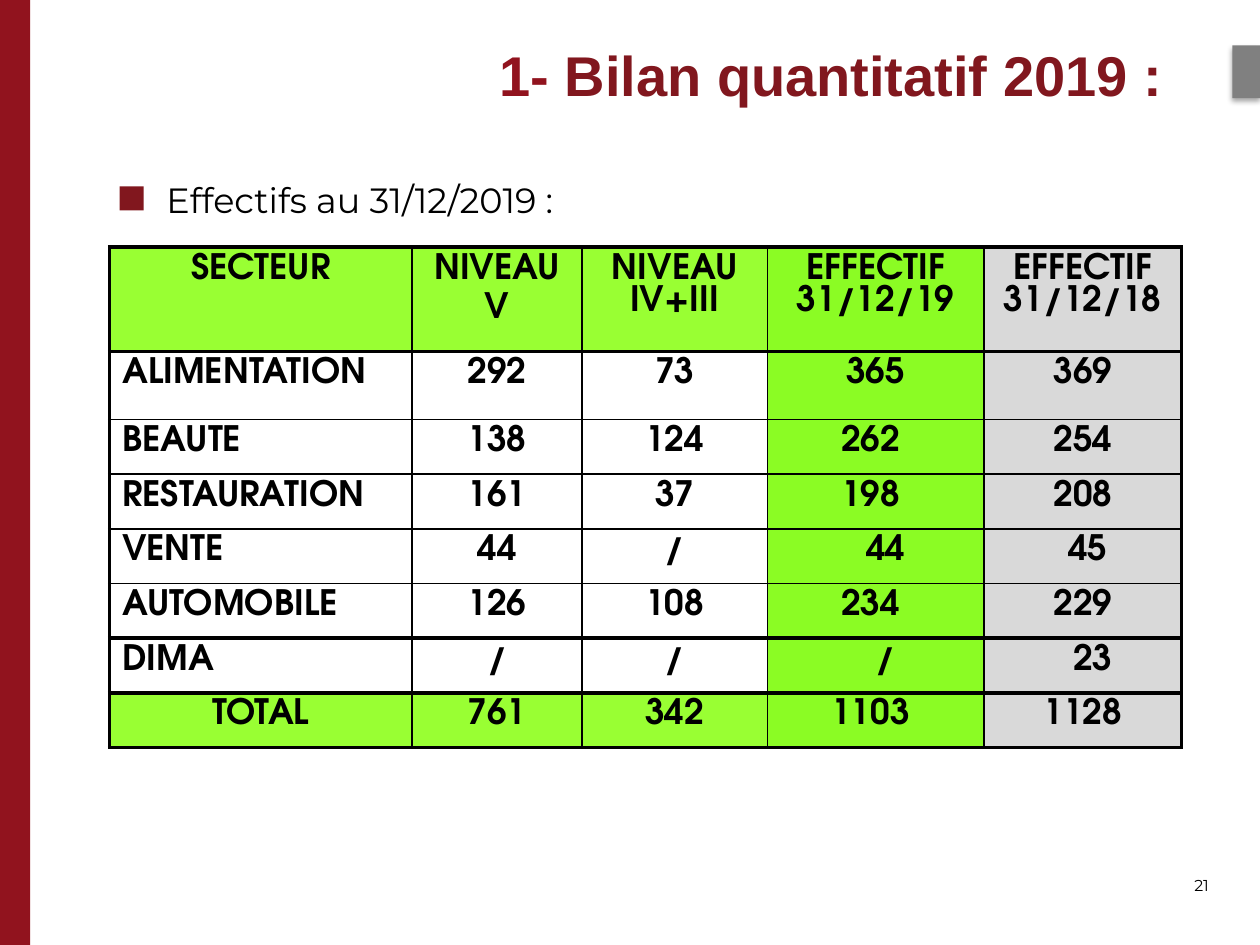
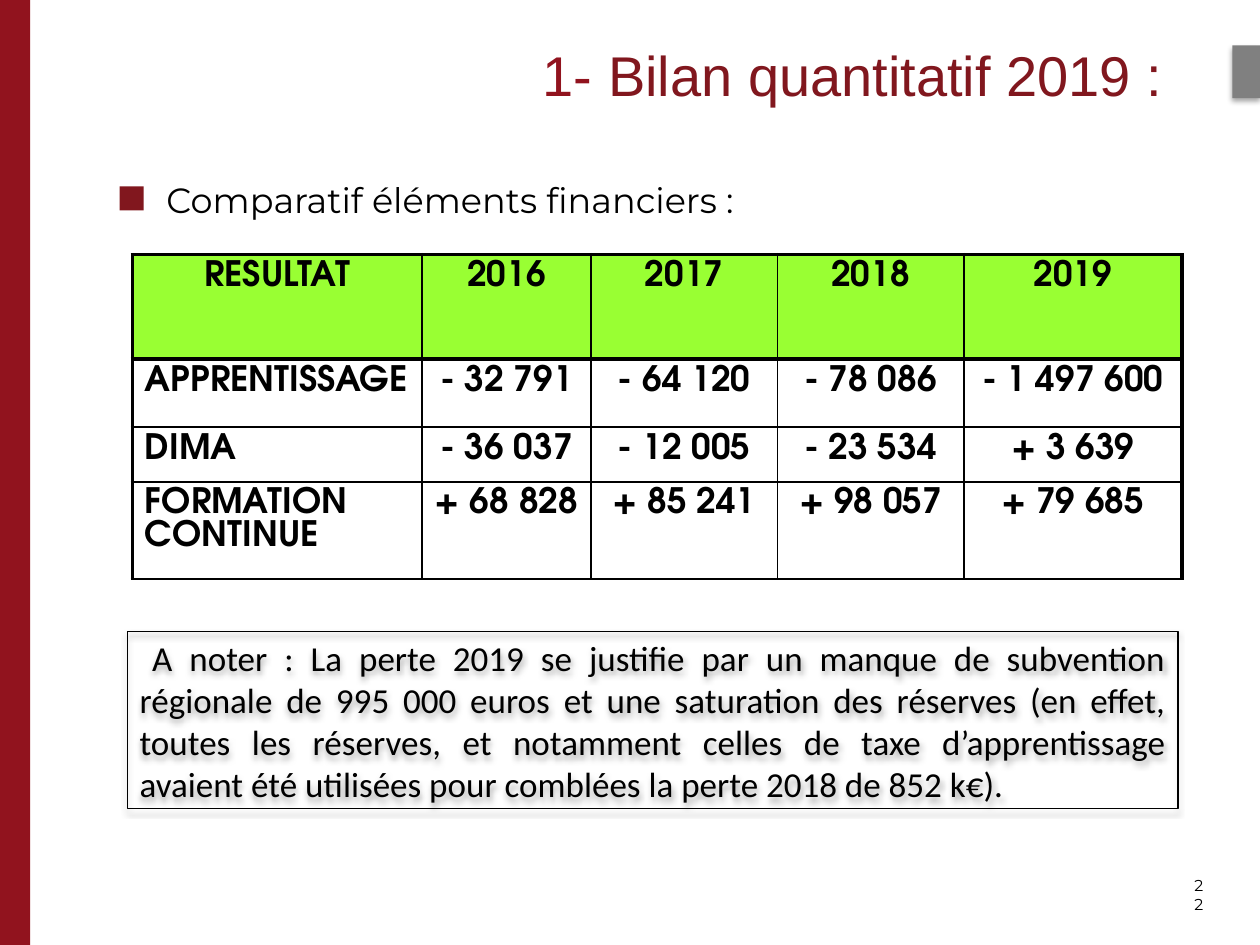
from lxml import etree
from pptx import Presentation
from pptx.dml.color import RGBColor
from pptx.enum.shapes import MSO_SHAPE as Preset
from pptx.enum.text import MSO_ANCHOR as Anchor, MSO_AUTO_SIZE as AutoSize, PP_ALIGN as Align
from pptx.oxml.ns import qn
from pptx.util import Inches, Pt

# Shared look
WIDTH, HEIGHT = 10, 7.5
RED, DARK_RED, BLACK, GREY = "91131E", "81171E", "000000", "808080"
LIME, GREEN, SILVER, WHITE = "99FF33", "8BFC24", "D9D9D9", "FFFFFF"
TITLE_FONT, BODY_FONT, TABLE_FONT, NOTE_FONT = "Arial", "Montserrat", "TeX Gyre Adventor", "Calibri"
THIN, THICK = 1, 2.25
SPACE = 0.08  # width of one space in the table font

# Content: "heavy" lists the thick horizontal rules, "nudges" shifts cells by whole spaces
SLIDES = [
    {
        "number": "21",
        "bold": True,
        "subtitle": "Effectifs au 31/12/2019 :",
        "origin": (0.87, 1.96),
        "columns": [2.4, 1.35, 1.47, 1.72, 1.57],
        "heights": [0.83, 0.54] + [0.43] * 6,
        "rows": [
            ["SECTEUR", "NIVEAU\nV", "NIVEAU IV+III", "EFFECTIF 31/12/19", "EFFECTIF 31/12/18"],
            ["ALIMENTATION", "292", "73", "365", "369"],
            ["BEAUTE", "138", "124", "262", "254"],
            ["RESTAURATION", "161", "37", "198", "208"],
            ["VENTE", "44", "/", "44", "45"],
            ["AUTOMOBILE", "126", "108", "234", "229"],
            ["DIMA", "/", "/", "/", "23"],
            ["TOTAL", "761", "342", "1103", "1128"],
        ],
        "lime_rows": {0, 7},
        "column_fills": {3: GREEN, 4: SILVER},
        "heavy": {0, 1, 6, 7, 8},
        "nudges": {(2, 3): -1, (3, 3): -1, (4, 3): 2, (5, 3): -1, (6, 3): 2,
                   (7, 3): -1, (4, 4): 1, (6, 4): 2},
        "note": None,
    },
    {
        "number": "22",
        "bold": False,
        "subtitle": "Comparatif éléments financiers :",
        "origin": (1.05, 2.02),
        "columns": [2.3, 1.34, 1.48, 1.48, 1.73],
        "heights": [0.83, 0.54, 0.43, 0.77],
        "rows": [
            ["RESULTAT", "2016", "2017", "2018", "2019"],
            ["APPRENTISSAGE", "- 32 791", "- 64 120", "- 78 086", "- 1 497 600"],
            ["DIMA", "- 36 037", "- 12 005", "- 23 534", "+ 3 639"],
            ["FORMATION CONTINUE", "+ 68 828", "+ 85 241", "+ 98 057", "+ 79 685"],
        ],
        "lime_rows": {0},
        "column_fills": {},
        "heavy": {0, 1},
        "nudges": {},
        "note": "A noter : La perte 2019 se justifie par un manque de subvention régionale de "
                "995 000 euros et une saturation des réserves (en effet, toutes les réserves, et "
                "notamment celles de taxe d’apprentissage avaient été utilisées pour comblées la "
                "perte 2018 de 852 k€).",
    },
]


def color(value):
    return RGBColor.from_string(value)


def place(shape, left, top, width, height):
    shape.left, shape.top, shape.width, shape.height = map(Inches, (left, top, width, height))


def write(frame, text, size=20, font=BODY_FONT, fill=BLACK, bold=False, align=Align.LEFT,
          spacing=None, gap=4, indent=0):
    """Write text (a string, or a list of (text, colour) runs) into a frame."""
    runs = [(text, fill)] if isinstance(text, str) else text
    frame.word_wrap = True
    paragraph = frame.paragraphs[0]
    paragraphs = [paragraph]
    for content, run_fill in runs:
        for index, line in enumerate(content.split("\n")):
            if index:
                paragraph = frame.add_paragraph()
                paragraphs.append(paragraph)
            run = paragraph.add_run()
            run.text = line
            run.font.size, run.font.name, run.font.bold = Pt(size), font, bold
            run.font.color.rgb = color(run_fill)
    for index, paragraph in enumerate(paragraphs):
        paragraph.alignment = align
        paragraph.space_before = Pt(gap if index else 0)
        if spacing:
            paragraph.line_spacing = spacing
        properties = paragraph._p.get_or_add_pPr()
        properties.set("marL", "0")
        properties.set("indent", str(Inches(indent)))


def add_shadow(shape):
    effects = shape._element.spPr.find(qn("a:effectLst"))
    shadow = etree.SubElement(effects, qn("a:outerShdw"), blurRad=str(Pt(3.1)),
                              dist=str(Pt(1.8)), dir="5400000", rotWithShape="0")
    tint = etree.SubElement(shadow, qn("a:srgbClr"), val=BLACK)
    etree.SubElement(tint, qn("a:alpha"), val="35000")


def add_rectangle(slide, box, fill=None, line=None, shadow=False):
    shape = slide.shapes.add_shape(Preset.RECTANGLE, *map(Inches, box))
    shape.shadow.inherit = False
    if fill:
        shape.fill.solid()
        shape.fill.fore_color.rgb = color(fill)
    else:
        shape.fill.background()
    if line:
        shape.line.color.rgb = color(line)
        shape.line.width = Pt(0.75)
    else:
        shape.line.fill.background()
    if shadow:
        add_shadow(shape)
    return shape


def set_borders(cell, widths):
    properties = cell._tc.get_or_add_tcPr()
    for side in "LRTB":
        line = etree.SubElement(properties, qn(f"a:ln{side}"), w=str(Pt(widths[side])))
        solid = etree.SubElement(line, qn("a:solidFill"))
        etree.SubElement(solid, qn("a:srgbClr"), val=BLACK)


def add_grid(slide, data):
    columns, heights, rows = data["columns"], data["heights"], data["rows"]
    box = (*data["origin"], sum(columns), sum(heights))
    table = slide.shapes.add_table(len(rows), len(columns), *map(Inches, box)).table
    table.first_row = table.horz_banding = False
    for column, width in zip(table.columns, columns):
        column.width = Inches(width)
    for row, height in zip(table.rows, heights):
        row.height = Inches(height)

    def rule(index):
        return THICK if index in data["heavy"] else THIN

    for r, row in enumerate(rows):
        lime = r in data["lime_rows"]
        for c, text in enumerate(row):
            cell = table.cell(r, c)
            set_borders(cell, {"L": THIN if c else THICK,
                               "R": THICK if c == len(row) - 1 else THIN,
                               "T": rule(r), "B": rule(r + 1)})
            cell.fill.solid()
            cell.fill.fore_color.rgb = color(data["column_fills"].get(c, LIME if lime else WHITE))
            nudge = data["nudges"].get((r, c), 0) * SPACE
            cell.margin_left = Inches(0.1 + max(nudge, 0))
            cell.margin_right = Inches(0.1 + max(-nudge, 0))
            write(cell.text_frame, text, font=TABLE_FONT, bold=True,
                  align=Align.CENTER if c or lime else Align.LEFT)


def add_frame(slide, data):
    """Band, tab, title, subtitle with its square, and page number."""
    add_rectangle(slide, (0, 0, 0.24, HEIGHT), fill=RED)
    add_rectangle(slide, (WIDTH - 0.22, 0.36, 0.22, 0.42), fill=GREY, shadow=True)
    add_rectangle(slide, (0.95, 1.48, 0.19, 0.19), fill=DARK_RED)

    title, subtitle = slide.shapes.title, slide.placeholders[1]
    place(title, 3.23, 0.27, 6.47, 0.64)
    place(subtitle, 1.22, 1.2, 5.34, 0.6)
    for shape in (title, subtitle):
        shape.text_frame.auto_size = AutoSize.NONE
        shape.text_frame.vertical_anchor = Anchor.TOP
    title.text_frame.margin_right = Inches(0.47)
    write(title.text_frame, [("1-", RED), (" Bilan quantitatif 2019 :", DARK_RED)], size=32,
          font=TITLE_FONT, bold=data["bold"], align=Align.RIGHT)
    write(subtitle.text_frame, data["subtitle"], spacing=1.5)
    properties = subtitle.text_frame.paragraphs[0]._p.get_or_add_pPr()
    etree.SubElement(properties, qn("a:buNone"))

    number = slide.shapes.add_textbox(*map(Inches, (9.38, 6.9, 0.32, 0.49)))
    write(number.text_frame, data["number"], size=9)


def add_note(slide, text):
    note = add_rectangle(slide, (1.01, 5.01, 8.34, 1.41), line=BLACK, shadow=True)
    note.text_frame.vertical_anchor = Anchor.MIDDLE
    write(note.text_frame, text, font=NOTE_FONT, align=Align.JUSTIFY, indent=0.1)


def main():
    presentation = Presentation()
    presentation.slide_width, presentation.slide_height = Inches(WIDTH), Inches(HEIGHT)
    for data in SLIDES:
        slide = presentation.slides.add_slide(presentation.slide_layouts[1])
        add_frame(slide, data)
        add_grid(slide, data)
        if data["note"]:
            add_note(slide, data["note"])
    presentation.save("out.pptx")


if __name__ == "__main__":
    main()
